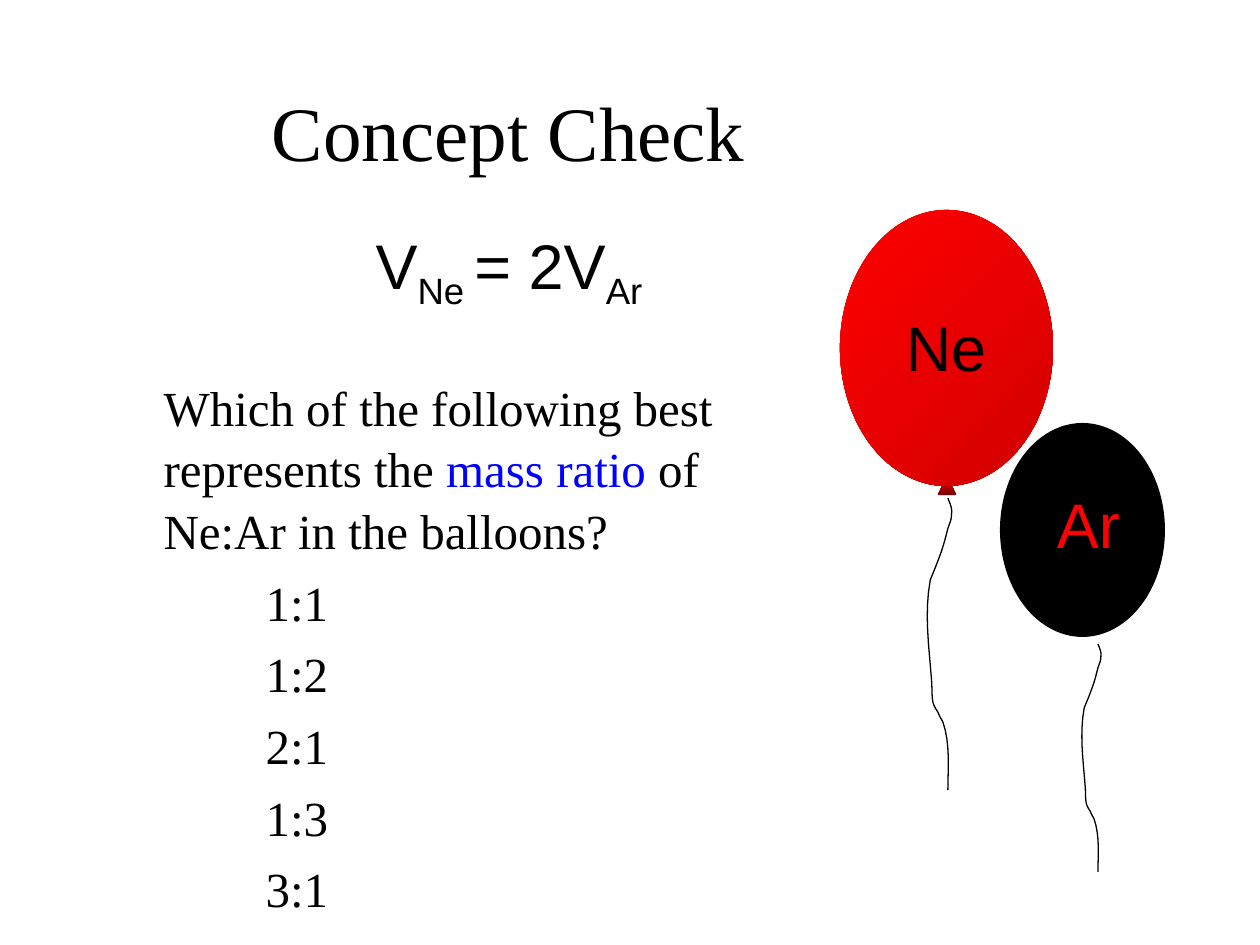
import lxml.etree
import pptx
import pptx.dml.color
import pptx.enum.shapes
import pptx.enum.text
import pptx.oxml.ns
import pptx.util

SCALE = 914400 / 126  # EMU in one px
RGB = pptx.dml.color.RGBColor
BLACK = RGB(0, 0, 0)
RED = RGB(255, 0, 0)
DEEP_RED = RGB(0xD1, 0, 0)
KNOT_RED = RGB(0x76, 0, 0)
BLUE = RGB(0, 0, 255)
SERIF, SANS = "Times New Roman", "Arial"
ALIGN = pptx.enum.text.PP_ALIGN
SHAPE = pptx.enum.shapes.MSO_SHAPE

# Balloon string hanging from (0, 0), 232 units long: cubic curves
STRING_LENGTH = 232
STRING_CURVES = [
    [(1, 3), (3, 7), (3, 10)],
    [(3, 20), (1, 19), (-1, 28)],
    [(-4, 41), (-9, 53), (-14, 65)],
    [(-19, 92), (-15, 118), (-13, 145)],
    [(-12, 158), (-14, 162), (-8, 170)],
    [(-7, 173), (-5, 176), (-4, 178)],
    [(2, 195), (0, 215), (0, 232)],
]


def px(value):
    return pptx.util.Emu(round(value * SCALE))


def write(para, text, font=SERIF, size=28, color=BLACK, subscript=False):
    span = para.add_run()
    span.text = text
    span.font.name = font
    span.font.size = pptx.util.Pt(size)
    span.font.color.rgb = color
    if subscript:
        span._r.get_or_add_rPr().set("baseline", "-25000")


def place(shape, box):
    shape.left, shape.top, shape.width, shape.height = map(px, box)


def add_label(shapes, box, spans, align=ALIGN.CENTER, wrap=True):
    """Add a text box; spans are (text, format) pairs."""
    label = shapes.add_textbox(*map(px, box))
    label.text_frame.word_wrap = wrap
    para = label.text_frame.paragraphs[0]
    para.alignment = align
    for text, style in spans:
        write(para, text, font=SANS, size=36, **style)


def add_filled(shapes, kind, box, colors, angle=0):
    """Add a borderless shape, with a clockwise gradient if given two colors."""
    shape = shapes.add_shape(kind, *map(px, box))
    shape.shadow.inherit = False
    shape.line.fill.background()
    if len(colors) == 1:
        shape.fill.solid()
        shape.fill.fore_color.rgb = colors[0]
    else:
        shape.fill.gradient()
        shape.fill.gradient_angle = 360 - angle
        for stop, color in zip(shape.fill.gradient_stops, colors):
            stop.color.rgb = color


def curve_points(steps=8):
    start = (0, 0)
    for first, second, end in STRING_CURVES:
        for step in range(1, steps + 1):
            t = step / steps
            yield tuple(
                (1 - t) ** 3 * a + 3 * (1 - t) ** 2 * t * b + 3 * (1 - t) * t**2 * c + t**3 * d
                for a, b, c, d in zip(start, first, second, end)
            )
        start = end


def add_string(shapes, left, top, length):
    ratio = length / STRING_LENGTH
    builder = shapes.build_freeform(px(left), px(top))
    builder.add_line_segments(
        [(px(left + x * ratio), px(top + y * ratio)) for x, y in curve_points()], close=False
    )
    string = builder.convert_to_shape()
    string.shadow.inherit = False
    string.fill.background()
    string.line.color.rgb = BLACK
    string.line.width = pptx.util.Pt(0.75)


def add_balloon(page, box, name, label_box, string, colors, knot=None, **style):
    """Label box, string start and knot are relative to the balloon's corner."""
    left, top, width, height = box
    shapes = page.shapes.add_group_shape().shapes
    if knot:
        x, y, w, h = knot
        add_filled(shapes, SHAPE.ISOSCELES_TRIANGLE, (left + x, top + y, w, h), [RED, KNOT_RED], 90)
    x, y, length = string
    add_string(shapes, left + x, top + y, length)
    add_filled(shapes, SHAPE.OVAL, box, colors, 45)
    x, y, w, h = label_box
    add_label(shapes, (left + x, top + y, w, h), [(name, style)], wrap=False)


def add_title(page, box):
    title = page.shapes.title
    place(title, box)
    title.text_frame.vertical_anchor = pptx.enum.text.MSO_ANCHOR.MIDDLE
    para = title.text_frame.paragraphs[0]
    para.alignment = ALIGN.CENTER
    write(para, "Concept Check", size=44)


def format_item(para, margin, level=0):
    para.level = level
    para.line_spacing = 1.05
    para.space_before = pptx.util.Pt(5.6)
    props = para._p.get_or_add_pPr()
    props.set("marL", str(px(margin)))
    props.set("indent", "0")
    lxml.etree.SubElement(props, pptx.oxml.ns.qn("a:buNone"))


def add_question(page, box):
    body = page.placeholders[1]
    place(body, box)
    frame = body.text_frame
    frame.auto_size = pptx.enum.text.MSO_AUTO_SIZE.NONE
    para = frame.paragraphs[0]
    format_item(para, 78)
    write(para, "Which of the following best represents the ")
    write(para, "mass ratio", color=BLUE)
    write(para, " of Ne:Ar in the balloons?")
    for answer in ["1:1", "1:2", "2:1", "1:3", "3:1"]:
        para = frame.add_paragraph()
        format_item(para, 180, level=1)
        write(para, answer)


def main():
    deck = pptx.Presentation()
    deck.slide_width, deck.slide_height = px(1260), px(945)
    page = deck.slides.add_slide(deck.slide_layouts[1])
    add_title(page, (220, 63, 577, 136))
    add_question(page, (73, 368, 672, 546))
    add_balloon(page, (840, 210, 213, 276), "Ne", (53, 92, 106, 88), (108, 288, 292),
                [RED, DEEP_RED], knot=(98, 266, 18, 19), color=BLACK)
    add_balloon(page, (1000, 423, 165, 214), "Ar", (44, 56, 89, 88), (98, 221, 228),
                [BLACK], color=RED)
    low = {"subscript": True}
    add_label(page.shapes, (262, 220, 494, 88),
              [("V", {}), ("Ne ", low), ("= 2V", {}), ("Ar", low)])
    deck.save("out.pptx")


if __name__ == "__main__":
    main()
